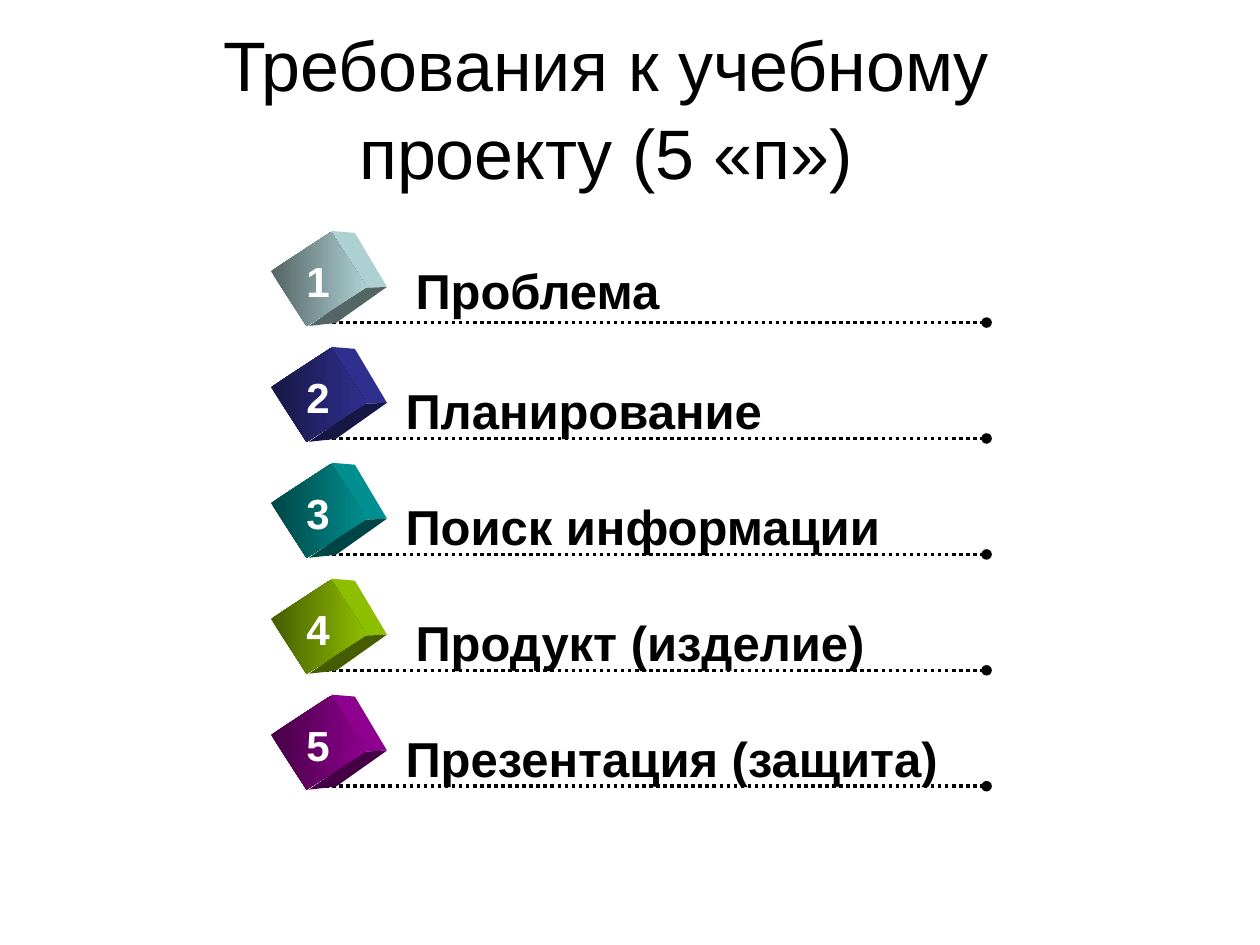
from dataclasses import dataclass

from lxml import etree
from pptx import Presentation
from pptx.dml.color import RGBColor
from pptx.enum.dml import MSO_LINE
from pptx.enum.shapes import MSO_CONNECTOR, MSO_SHAPE
from pptx.enum.text import MSO_ANCHOR, MSO_AUTO_SIZE, PP_ALIGN
from pptx.oxml.ns import qn
from pptx.util import Emu, Inches, Pt

STRAIGHT = MSO_CONNECTOR.STRAIGHT
RECTANGLE = MSO_SHAPE.RECTANGLE
DOTTED = MSO_LINE.ROUND_DOT
LEFT, CENTER = PP_ALIGN.LEFT, PP_ALIGN.CENTER
MIDDLE = MSO_ANCHOR.MIDDLE
FIT_SHAPE = MSO_AUTO_SIZE.SHAPE_TO_FIT_TEXT

FONT = "Arial"
COLORS = {
    "text": "000000",
    "number": "FFFFFF",
    "mist": "BBE0E3",
    "indigo": "333399",
    "teal": "009999",
    "lime": "99CC00",
    "purple": "990099",
}
SLIDE_WIDTH, SLIDE_HEIGHT = Inches(10), Inches(7.5)
GRID_COLUMNS = 100
CELL = SLIDE_WIDTH // GRID_COLUMNS
FIRST_RULE, ROW_PITCH = 25.6, 9.2
RULE_START, RULE_END = 25.8, 78.3
SIDE_FACE = ((26.27, -7.27), (28.17, -7.11), (30.71, -2.83), (28.89, -2.75))
BOTTOM_FACE = ((28.89, -2.75), (30.71, -2.83), (26.67, 0.03), (24.52, 0.27))


@dataclass(frozen=True)
class Requirement:
    """One numbered requirement, with its label placed in grid cells."""

    label: str
    color: str
    left: float
    width: float
    rise: float = 5.1


REQUIREMENTS = (
    Requirement("Проблема", "mist", 32, 27.1, 5.4),
    Requirement("Планирование", "indigo", 31.2, 68.5),
    Requirement("Поиск информации", "teal", 31.2, 40.9),
    Requirement("Продукт (изделие)", "lime", 32, 40.5),
    Requirement("Презентация (защита)", "purple", 31.2, 59.2),
)


def cells(count: float) -> Emu:
    """Convert grid cells to a length."""
    return Emu(round(count * CELL))


def shade(name: str, strength: float) -> RGBColor:
    """Return a named colour darkened to the given strength."""
    base = RGBColor.from_string(COLORS[name])
    return RGBColor(*(round(channel * strength) for channel in base))


def write(frame, text: str, size: int, color: str, align, bold: bool) -> None:
    """Set one paragraph of text and format it."""
    frame.text = text
    para = frame.paragraphs[0]
    para.alignment = align
    font = para.runs[0].font
    font.name, font.size, font.bold = FONT, Pt(size), bold
    font.color.rgb = shade(color, 1)


def add_title(page, text: str) -> None:
    """Place and format the title placeholder."""
    title = page.shapes.title
    title.left, title.top = cells(10.2), cells(0)
    title.width, title.height = cells(75.8), cells(16.8)
    frame = title.text_frame
    frame.word_wrap = True
    frame.vertical_anchor = MIDDLE
    write(frame, text, 40, "text", CENTER, False)
    frame.paragraphs[0].line_spacing = 1.05


def add_rule(page, row: float) -> None:
    """Draw a dotted rule that ends in a dot."""
    rule = page.shapes.add_connector(
        STRAIGHT, cells(RULE_START), cells(row), cells(RULE_END), cells(row)
    )
    rule.line.color.rgb = shade("text", 1)
    rule.line.width = Pt(2)
    rule.line.dash_style = DOTTED
    etree.SubElement(rule.line._get_or_add_ln(), qn("a:tailEnd"), type="oval")
    etree.SubElement(rule._element.spPr, qn("a:effectLst"))


def add_face(page, points, row: float, color: RGBColor) -> None:
    """Draw one receding face of a cube."""
    corners = [(cells(x), cells(row + y)) for x, y in points]
    builder = page.shapes.build_freeform(*corners[0])
    builder.add_line_segments(corners[1:], close=True)
    face = builder.convert_to_shape()
    face.fill.solid()
    face.fill.fore_color.rgb = color
    face.line.fill.background()
    face.shadow.inherit = False


def add_cube(page, row: float, color: str) -> None:
    """Draw a tilted cube with a shaded front."""
    add_face(page, SIDE_FACE, row, shade(color, 0.93))
    add_face(page, BOTTOM_FACE, row, shade(color, 0.45))
    front = page.shapes.add_shape(
        RECTANGLE, cells(22.7), cells(row - 6.3), cells(5.2), cells(5.7)
    )
    front.rotation = 57
    front.shadow.inherit = False
    front.line.fill.background()
    front.fill.gradient()
    front.fill.gradient_angle = 57
    for stop, strength in zip(front.fill.gradient_stops, (0.45, 0.93)):
        stop.color.rgb = shade(color, strength)
    stops = front.fill.gradient_stops
    stops[0].position, stops[1].position = 0, 1


def add_text(page, text: str, left: float, top: float, width: float,
             height: float, size: int, color: str, align, wrap: bool) -> None:
    """Add a bold text box measured in grid cells."""
    box = page.shapes.add_textbox(
        cells(left), cells(top), cells(width), cells(height)
    )
    frame = box.text_frame
    frame.word_wrap = wrap
    frame.auto_size = FIT_SHAPE
    write(frame, text, size, color, align, True)


def add_requirement(page, index: int, item: Requirement) -> None:
    """Draw the rule, cube, number and label of one requirement."""
    row = FIRST_RULE + index * ROW_PITCH
    add_rule(page, row)
    add_cube(page, row, item.color)
    add_text(page, str(index + 1), 23.3, row - 5.8, 3.9, 5,
             24, "number", CENTER, False)
    add_text(page, item.label, item.left, row - item.rise, item.width, 5.7,
             28, "text", LEFT, True)


def main() -> None:
    """Build the slide of project requirements."""
    deck = Presentation()
    deck.slide_width, deck.slide_height = SLIDE_WIDTH, SLIDE_HEIGHT
    page = deck.slides.add_slide(deck.slide_layouts.get_by_name("Title Only"))
    add_title(page, "Требования к учебному проекту (5 «п»)")
    for index, item in enumerate(REQUIREMENTS):
        add_requirement(page, index, item)
    deck.save("out.pptx")


if __name__ == "__main__":
    main()
